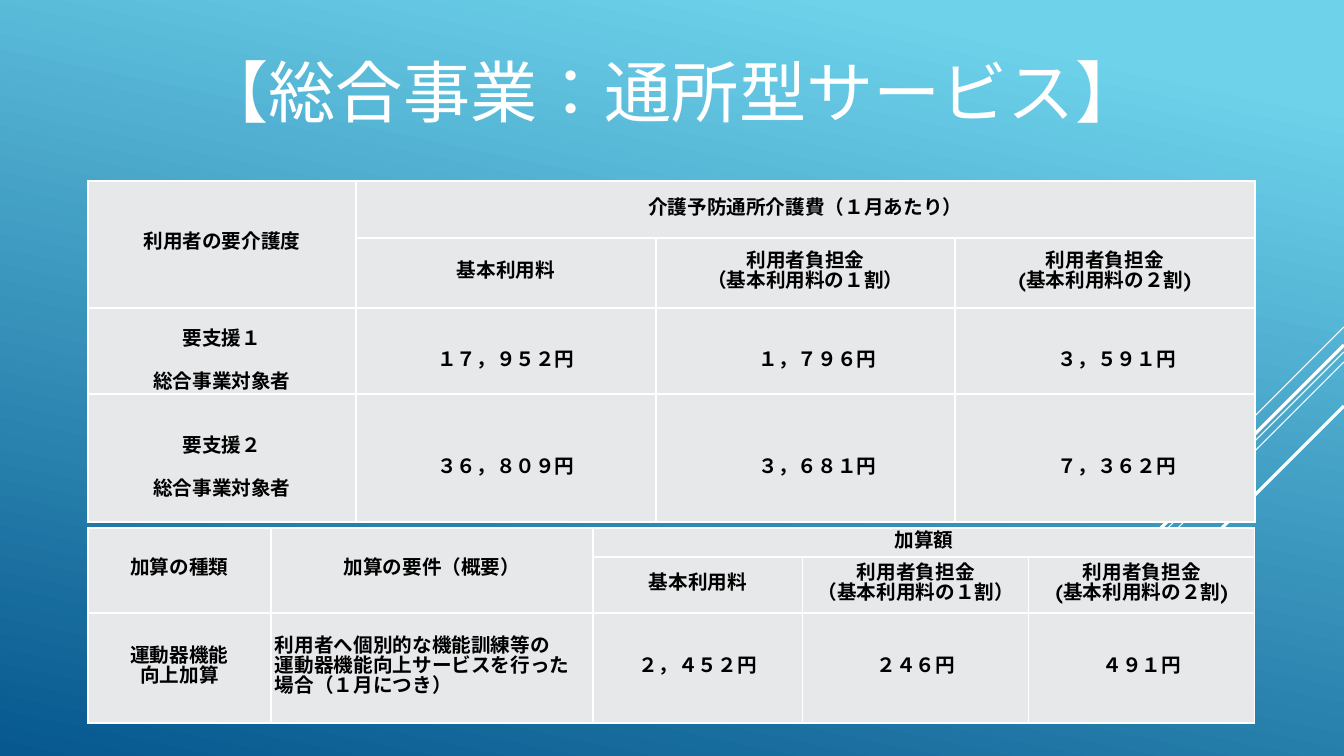
"""Build the slide with the fee tables for the day service."""
from lxml import etree
from pptx import Presentation
from pptx.dml.color import RGBColor
from pptx.enum.lang import MSO_LANGUAGE_ID
from pptx.enum.shapes import MSO_CONNECTOR
from pptx.enum.text import MSO_ANCHOR, PP_ALIGN
from pptx.oxml.ns import qn
from pptx.util import Pt

PX = 12192000 / 1344
FONT = "TeX Gyre Adventor"
WHITE, BLACK, GREY = "FFFFFF", "000000", "E7E8EA"
CENTER, JUSTIFY = PP_ALIGN.CENTER, PP_ALIGN.JUSTIFY
MIDDLE = MSO_ANCHOR.MIDDLE
STRAIGHT = MSO_CONNECTOR.STRAIGHT
JAPANESE = MSO_LANGUAGE_ID.JAPANESE


def px(n):
    return round(n * PX)


def rgb(color):
    return RGBColor.from_string(color)


prs = Presentation()
prs.slide_width, prs.slide_height = px(1344), px(756)
s = prs.slides.add_slide(prs.slide_layouts[6])

fill = s.background.fill
fill.gradient()
fill.gradient_angle = 258
for stop, position, color in zip(fill.gradient_stops, (0.1, 1), ("6ED2EB", "06588E")):
    stop.position = position
    stop.color.rgb = rgb(color)

for top, run, width in [(327, 101, 0.75), (352, 329, 0.75), (362, 209, 0.75),
                        (345, 193, 2.25), (406, 140, 2.25)]:
    line = s.shapes.add_connector(STRAIGHT, px(1344), px(top), px(1344 - run), px(top + run))
    line.line.color.rgb = rgb(WHITE)
    line.line.width = Pt(width)
    etree.SubElement(line._element.spPr, qn("a:effectLst"))

title = s.shapes.add_textbox(0, 0, px(1344), px(181))
tf = title.text_frame
tf.word_wrap = True
tf.vertical_anchor = MIDDLE
tf.text = "【総合事業：通所型サービス】"
p = tf.paragraphs[0]
p.alignment = CENTER
font = p.runs[0].font
font.name, font.size, font.language_id = FONT, Pt(48), JAPANESE
font.color.rgb = rgb(WHITE)

SHARE_10 = "利用者負担金\n（基本利用料の１割）"
SHARE_20 = "利用者負担金\n(基本利用料の２割)"
fees = [
    ["利用者の要介護度", "介護予防通所介護費（１月あたり）", "", ""],
    ["", "基本利用料", SHARE_10, SHARE_20],
    ["要支援１\n総合事業対象者", "１７，９５２円", "１，７９６円", "３，５９１円"],
    ["要支援２\n総合事業対象者", "３６，８０９円", "３，６８１円", "７，３６２円"],
]
additions = [
    ["加算の種類", "加算の要件（概要）", "加算額", "", ""],
    ["", "", "基本利用料", SHARE_10, SHARE_20],
    ["運動器機能\n向上加算",
     "利用者へ個別的な機能訓練等の\n運動器機能向上サービスを行った\n場合（１月につき）",
     "２，４５２円", "２４６円", "４９１円"],
]
tables = [
    (181, [268, 300, 299, 300], [57, 70, 86, 128], fees,
     [(0, 0, 1, 0), (0, 1, 0, 3)]),
    (528, [183, 322, 210, 226, 226], [29, 56, 110], additions,
     [(0, 0, 1, 0), (0, 1, 1, 1), (0, 2, 0, 4)]),
]

for top, widths, heights, texts, merges in tables:
    frame = s.shapes.add_table(len(heights), len(widths), px(88), px(top),
                               px(sum(widths)), px(sum(heights)))
    table = frame.table
    table.first_row = table.horz_banding = False
    for column, width in zip(table.columns, widths):
        column.width = px(width)
    for row, height in zip(table.rows, heights):
        row.height = px(height)
    for r1, c1, r2, c2 in merges:
        table.cell(r1, c1).merge(table.cell(r2, c2))

    for i, row_texts in enumerate(texts):
        for j, text in enumerate(row_texts):
            cell = table.cell(i, j)
            fee_row = texts is fees and i >= 2
            cell.margin_left = px(28 if fee_row and j >= 2 else 4)
            cell.margin_right = px(4)
            cell.margin_top = cell.margin_bottom = 0
            cell.vertical_anchor = MIDDLE
            tcPr = cell._tc.get_or_add_tcPr()
            for side in ("a:lnL", "a:lnR", "a:lnT", "a:lnB"):
                ln = etree.SubElement(tcPr, qn(side), w=str(Pt(1)))
                solid = etree.SubElement(ln, qn("a:solidFill"))
                etree.SubElement(solid, qn("a:srgbClr"), val=WHITE)
            cell.fill.solid()
            cell.fill.fore_color.rgb = rgb(GREY)
            if not text:
                continue
            cell.text_frame.text = text
            for p in cell.text_frame.paragraphs:
                p.alignment = JUSTIFY if texts is additions and (i, j) == (2, 1) else CENTER
                p.line_spacing = 1.5 if fee_row else Pt(14.6)
                font = p.runs[0].font
                font.name, font.size, font.bold = FONT, Pt(14), True
                font.language_id = JAPANESE
                font.color.rgb = rgb(BLACK)

prs.save("out.pptx")
